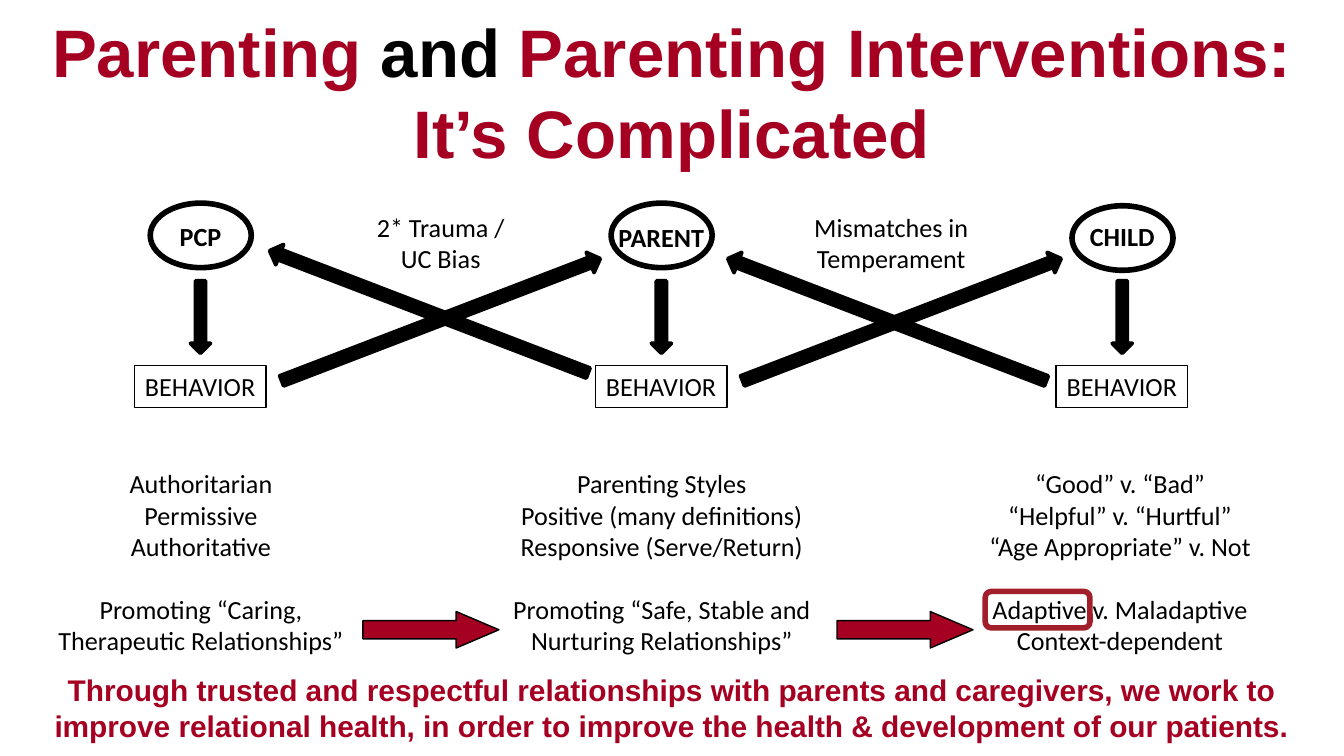
from pptx import Presentation
from pptx.dml.color import RGBColor
from pptx.enum.shapes import MSO_SHAPE
from pptx.enum.text import MSO_ANCHOR, PP_ALIGN
from pptx.util import Cm, Pt

BLACK, RED, FRAME_RED = "000000", "A50021", "A11E2A"
BODY = {"name": "Calibri", "size": Pt(14), "bold": False}
LABEL = {**BODY, "bold": True}
TITLE = {"name": "Arial", "size": Pt(36), "bold": True}
CLOSING = {**TITLE, "size": Pt(16)}
SMALL_INSETS = {"margin_left": Cm(0.18), "margin_right": Cm(0.18),
                "margin_top": Cm(0.1), "margin_bottom": Cm(0.1)}
WIDE_INSETS = {"margin_left": Cm(0.25), "margin_right": Cm(0.25),
               "margin_top": Cm(0.13), "margin_bottom": Cm(0.13)}

deck = Presentation()
deck.slide_width, deck.slide_height = Cm(25.4), Cm(14.29)
slide = deck.slides.add_slide(deck.slide_layouts[6])


def add_outline(kind, box, line_color, line_width, fill=None, rotation=0):
    shape = slide.shapes.add_shape(kind, *map(Cm, box))
    shape.shadow.inherit = False
    shape.rotation = rotation
    if fill:
        shape.fill.solid()
        shape.fill.fore_color.rgb = RGBColor.from_string(fill)
    else:
        shape.fill.background()
    shape.line.color.rgb = RGBColor.from_string(line_color)
    shape.line.width = Pt(line_width)
    return shape


def write(frame, lines, font, insets=SMALL_INSETS, anchor=MSO_ANCHOR.TOP):
    for key, value in {**insets, "word_wrap": True, "vertical_anchor": anchor}.items():
        setattr(frame, key, value)
    for index, line in enumerate(lines):
        paragraph = frame.paragraphs[0] if index == 0 else frame.add_paragraph()
        paragraph.alignment = PP_ALIGN.CENTER
        for words, color in line:
            run = paragraph.add_run()
            run.text = words
            run.font.color.rgb = RGBColor.from_string(color)
            for key, value in font.items():
                setattr(run.font, key, value)


people = [("PCP", 3.84, 4.06), ("PARENT", 3.84, 4.09), ("CHILD", 3.89, 4.06)]
for column, (person, oval_top, person_top) in enumerate(people):
    center = 3.79 + 8.71 * column
    behavior = add_outline(MSO_SHAPE.RECTANGLE, (center - 1.25, 6.91, 2.49, 0.79), BLACK, 0.75)
    write(behavior.text_frame, [[("BEHAVIOR", BLACK)]], BODY)
    name_box = slide.shapes.add_textbox(Cm(center - 1.03), Cm(person_top), Cm(2.06), Cm(0.8))
    write(name_box.text_frame, [[(person, BLACK)]], LABEL)
    add_outline(MSO_SHAPE.OVAL, (center - 0.95, oval_top, 1.91, 1.22), BLACK, 3)
    add_outline(MSO_SHAPE.DOWN_ARROW, (center - 0.19, 5.31, 0.38, 1.37), BLACK, 2, BLACK)

outcomes = [
    (0.74, 6.12, ["Authoritarian", "Permissive", "Authoritative",
                  "Promoting “Caring, Therapeutic Relationships”"]),
    (9.45, 6.12, ["Parenting Styles", "Positive (many definitions)", "Responsive (Serve/Return)",
                  "Promoting “Safe, Stable and Nurturing Relationships”"]),
    (17.78, 6.78, ["“Good” v. “Bad”", "“Helpful” v. “Hurtful”", "“Age Appropriate” v. Not",
                   "Adaptive v. Maladaptive", "Context-dependent"]),
]
for left, width, lines in outcomes:
    outcome = slide.shapes.add_textbox(Cm(left), Cm(8.74), Cm(width), Cm(3.84))
    write(outcome.text_frame, [[(line, BLACK)] for line in lines], BODY)
    outcome.text_frame.paragraphs[3].space_before = Pt(17)

for left, top, rotation in [(13.82, 5.84, 339), (5.11, 5.84, 339),
                            (13.54, 5.84, 201), (4.88, 5.69, 201)]:
    add_outline(MSO_SHAPE.RIGHT_ARROW, (left, top, 6.45, 0.41), BLACK, 2, BLACK, rotation)

for left, width, strain in [(15.04, 3.61, "Mismatches in Temperament"),
                            (6.83, 3, "2* Trauma / UC Bias")]:
    strain_box = slide.shapes.add_textbox(Cm(left), Cm(3.89), Cm(width), Cm(1.4))
    write(strain_box.text_frame, [[(strain, BLACK)]], BODY)

title = slide.shapes.add_textbox(Cm(0), Cm(0.08), Cm(25.4), Cm(3.28))
write(title.text_frame, [
    [("Parenting ", RED), ("and", BLACK), (" Parenting Interventions:", RED)],
    [("It’s Complicated", RED)],
], TITLE, WIDE_INSETS, MSO_ANCHOR.MIDDLE)

closing = slide.shapes.add_textbox(Cm(0), Cm(12.57), Cm(25.4), Cm(1.63))
write(closing.text_frame, [[(
    "Through trusted and respectful relationships with parents and caregivers, we work to "
    "improve relational health, in order to improve the health & development of our patients.",
    RED)]], CLOSING, WIDE_INSETS)

for left in (6.86, 15.82):
    progress = add_outline(MSO_SHAPE.RIGHT_ARROW, (left, 11.56, 2.57, 0.69), BLACK, 0.75, RED)
    progress.adjustments[1] = 1.17

add_outline(MSO_SHAPE.ROUNDED_RECTANGLE, (18.62, 11.18, 1.98, 0.69), FRAME_RED, 3)

deck.save("out.pptx")
